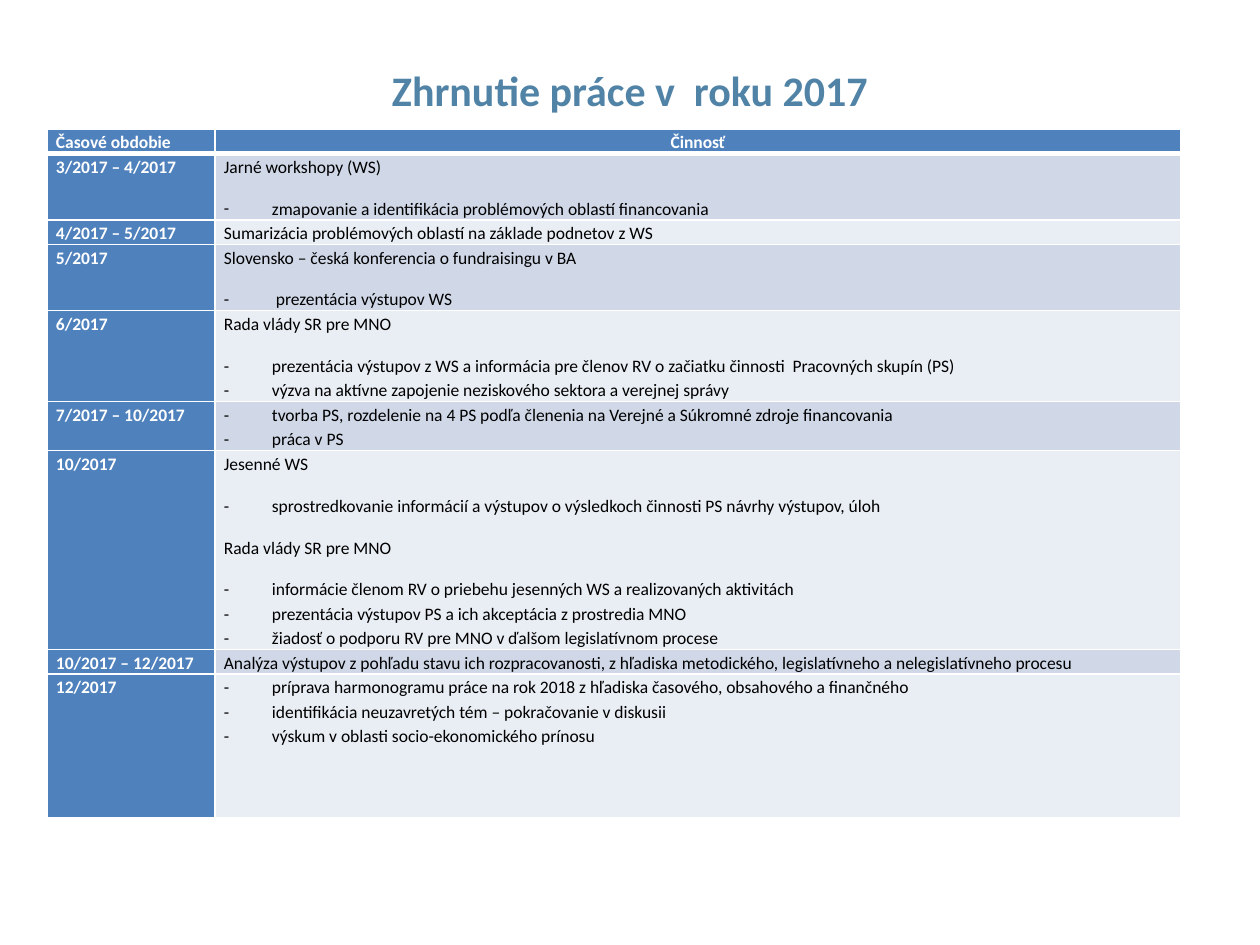
import pptx
import pptx.util
import pptx.dml.color
import pptx.enum.text
import lxml.etree

ALIGN = pptx.enum.text.PP_ALIGN
ANCHOR = pptx.enum.text.MSO_ANCHOR
DRAWING_NS = "http://schemas.openxmlformats.org/drawingml/2006/main"
FONT = "Calibri"
WHITE = "FFFFFF"
BLACK = "000000"
BLUE = "4F81BD"
BANDS = ("D0D8E8", "E9EDF4")
BULLET = "- "
INDENT = 48
COLUMN_WIDTHS = (168, 966)
HEADINGS = ("Časové obdobie", "Činnosť")

SCHEDULE = [
    ("3/2017 – 4/2017", 66, [
        "Jarné workshopy (WS)",
        "- zmapovanie a identifikácia problémových oblastí financovania"]),
    ("4/2017 – 5/2017", 24, [
        "Sumarizácia problémových oblastí na základe podnetov z WS"]),
    ("5/2017", 66, [
        "Slovensko – česká konferencia o fundraisingu v BA",
        "-  prezentácia výstupov WS"]),
    ("6/2017", 91, [
        "Rada vlády SR pre MNO",
        "- prezentácia výstupov z WS a informácia pre členov RV o začiatku činnosti  Pracovných skupín (PS)",
        "- výzva na aktívne zapojenie neziskového sektora a verejnej správy"]),
    ("7/2017 – 10/2017", 48, [
        "- tvorba PS, rozdelenie na 4 PS podľa členenia na Verejné a Súkromné zdroje financovania",
        "- práca v PS"]),
    ("10/2017", 199, [
        "Jesenné WS",
        "- sprostredkovanie informácií a výstupov o výsledkoch činnosti PS návrhy výstupov, úloh",
        "Rada vlády SR pre MNO",
        "- informácie členom RV o priebehu jesenných WS a realizovaných aktivitách",
        "- prezentácia výstupov PS a ich akceptácia z prostredia MNO",
        "- žiadosť o podporu RV pre MNO v ďalšom legislatívnom procese"]),
    ("10/2017 – 12/2017", 24, [
        "Analýza výstupov z pohľadu stavu ich rozpracovanosti, z hľadiska metodického, "
        "legislatívneho a nelegislatívneho procesu"]),
    ("12/2017", 144, [
        "- príprava harmonogramu práce na rok 2018 z hľadiska časového, obsahového a finančného",
        "- identifikácia neuzavretých tém – pokračovanie v diskusii",
        "- výskum v oblasti socio-ekonomického prínosu"]),
]


def px(length):
    return pptx.util.Emu(round(length * 914400 / 126))


def color(value):
    return pptx.dml.color.RGBColor.from_string(value)


def child(parent, tag, **attributes):
    return lxml.etree.SubElement(parent, f"{{{DRAWING_NS}}}{tag}", **attributes)


def format_runs(paragraph, size, value, bold):
    for run in paragraph.runs:
        run.font.name = FONT
        run.font.size = pptx.util.Pt(size)
        run.font.bold = bold
        run.font.color.rgb = color(value)


def add_bullet(paragraph):
    properties = paragraph._p.get_or_add_pPr()
    properties.set("marL", str(px(INDENT)))
    properties.set("indent", str(-px(INDENT)))
    child(properties, "buFont", typeface=FONT)
    child(properties, "buChar", char=BULLET.strip())


def add_borders(cell, bottom):
    properties = cell._tc.get_or_add_tcPr()
    for side, points in (("L", 1), ("R", 1), ("T", 1), ("B", bottom)):
        border = child(properties, f"ln{side}", w=str(pptx.util.Pt(points)))
        child(child(border, "solidFill"), "srgbClr", val=WHITE)


def fill_cell(cell, lines, background, ink, bold, alignment=ALIGN.JUSTIFY, bottom=1):
    cell.margin_left = cell.margin_right = px(9)
    cell.margin_top = cell.margin_bottom = 0
    cell.vertical_anchor = ANCHOR.TOP
    add_borders(cell, bottom)
    cell.fill.solid()
    cell.fill.fore_color.rgb = color(background)
    for index, line in enumerate(lines):
        paragraph = cell.text_frame.paragraphs[0] if index == 0 else cell.text_frame.add_paragraph()
        bulleted = line.startswith(BULLET)
        paragraph.text = line.removeprefix(BULLET)
        if bulleted:
            add_bullet(paragraph)
        list_continues = bulleted and index + 1 < len(lines) and lines[index + 1].startswith(BULLET)
        paragraph.alignment = alignment
        paragraph.line_spacing = 1.15
        paragraph.space_after = pptx.util.Pt(0 if list_continues else 10)
        format_runs(paragraph, 10, ink, bold)


def place_title(slide, left, top, width, height):
    title = slide.shapes.title
    title.left, title.top, title.width, title.height = map(px, (left, top, width, height))
    title.text_frame.text = "Zhrnutie práce v  roku 2017"
    title.text_frame.vertical_anchor = ANCHOR.MIDDLE
    heading = title.text_frame.paragraphs[0]
    heading.alignment = ALIGN.CENTER
    format_runs(heading, 24, "5083A5", True)


def place_schedule(slide, left, top, width, height):
    schedule = slide.shapes.add_table(
        len(SCHEDULE) + 1, len(HEADINGS), *map(px, (left, top, width, height))).table
    schedule.horz_banding = False
    for column, column_width in zip(schedule.columns, COLUMN_WIDTHS):
        column.width = px(column_width)
    schedule.rows[0].height = px(24)
    for column, (heading, alignment) in enumerate(zip(HEADINGS, (ALIGN.JUSTIFY, ALIGN.CENTER))):
        fill_cell(schedule.cell(0, column), [heading], BLUE, WHITE, True, alignment, bottom=3)
    for row, (period, row_height, activities) in enumerate(SCHEDULE, 1):
        schedule.rows[row].height = px(row_height)
        fill_cell(schedule.cell(row, 0), [period], BLUE, WHITE, True)
        fill_cell(schedule.cell(row, 1), activities, BANDS[(row - 1) % 2], BLACK, False)


def main():
    presentation = pptx.Presentation()
    presentation.slide_width = px(1260)
    presentation.slide_height = px(945)
    slide = presentation.slides.add_slide(presentation.slide_layouts[5])
    place_title(slide, 63, 42, 1134, 96)
    place_schedule(slide, 47, 129, 1134, 686)
    presentation.save("out.pptx")


if __name__ == "__main__":
    main()
